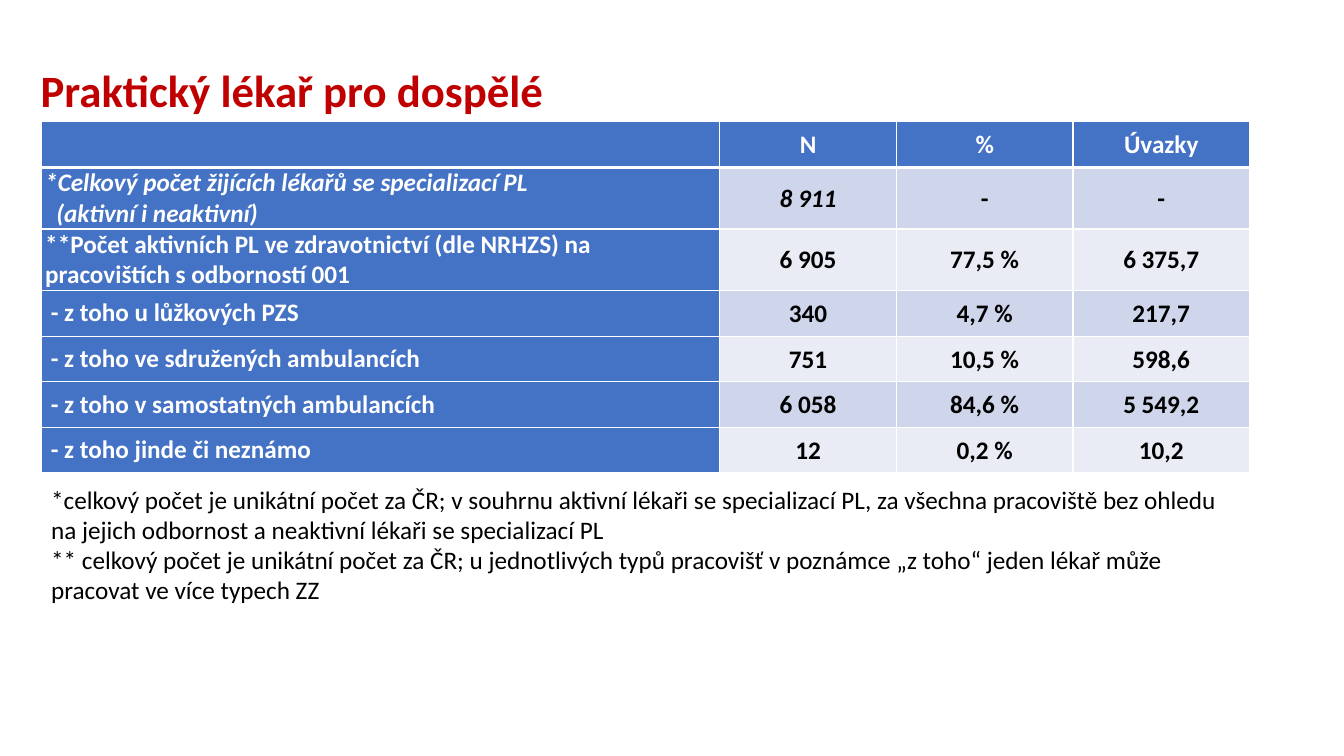
from lxml import etree
from pptx import Presentation
from pptx.dml.color import RGBColor
from pptx.enum.text import MSO_ANCHOR, MSO_AUTO_SIZE, PP_ALIGN
from pptx.oxml.ns import qn
from pptx.util import Cm, Pt

LEFT, CENTER = PP_ALIGN.LEFT, PP_ALIGN.CENTER
MIDDLE, BOTTOM = MSO_ANCHOR.MIDDLE, MSO_ANCHOR.BOTTOM
NO_FIT, GROW = MSO_AUTO_SIZE.NONE, MSO_AUTO_SIZE.SHAPE_TO_FIT_TEXT

WHITE = RGBColor(0xFF, 0xFF, 0xFF)
BLACK = RGBColor(0, 0, 0)
RED = RGBColor(0xC0, 0, 0)
BLUE = RGBColor(0x44, 0x72, 0xC4)
DARK = RGBColor(0xCF, 0xD5, 0xEA)
LIGHT = RGBColor(0xE9, 0xEB, 0xF5)


def write(frame, text, size=18, color=BLACK, bold=False, italic=False,
          align=LEFT, space=1.0, indents=()):
    """Fill a text frame, one paragraph per line; indents are in cm."""
    frame.text = text
    for par in frame.paragraphs:
        par.alignment = align
        par.line_spacing = space
        for run in par.runs:
            font = run.font
            font.name, font.size = "Calibri", Pt(size)
            font.bold, font.italic = bold, italic
            font.color.rgb = color
    for par, indent in zip(frame.paragraphs, indents):
        props = par._p.get_or_add_pPr()
        props.set("marL", str(Cm(indent)))
        props.set("indent", "0")


def edge(cell, side, width):
    """Add a white border; call before the cell gets its fill."""
    line = etree.SubElement(cell._tc.get_or_add_tcPr(), qn("a:ln" + side))
    line.set("w", str(Pt(width)))
    fill = etree.SubElement(line, qn("a:solidFill"))
    etree.SubElement(fill, qn("a:srgbClr")).set("val", str(WHITE))


deck = Presentation()
deck.slide_width, deck.slide_height = Cm(33.87), Cm(19.05)
slide = deck.slides.add_slide(deck.slide_layouts[5])

# Title
title = slide.shapes.title
title.left, title.top = Cm(0.77), Cm(1.42)
title.width, title.height = Cm(32.56), Cm(1.65)
write(title.text_frame, "Praktický lékař pro dospělé", size=32, color=RED,
      bold=True, space=1.1)
title.text_frame.vertical_anchor = BOTTOM
title.text_frame.auto_size = NO_FIT

# Table: label, its line indents, values
rows = [
    ("", (), "N", "%", "Úvazky"),
    ("*Celkový počet žijících lékařů se specializací PL\n(aktivní i neaktivní)",
     (0, 0.28), "8 911", "-", "-"),
    ("**Počet aktivních PL ve zdravotnictví (dle NRHZS) na\v"
     "pracovištích s odborností 001", (), "6 905", "77,5 %", "6 375,7"),
    ("- z toho u lůžkových PZS", (0.14,), "340", "4,7 %", "217,7"),
    ("- z toho ve sdružených ambulancích", (0.14,), "751", "10,5 %", "598,6"),
    ("- z toho v samostatných ambulancích", (0.14,),
     "6 058", "84,6 %", "5 549,2"),
    ("- z toho jinde či neznámo", (0.14,), "12", "0,2 %", "10,2"),
]
widths = [17.1, 4.45, 4.45, 4.45]
heights = [1.15, 1.55, 1.55, 1.15, 1.15, 1.15, 1.15]
table = slide.shapes.add_table(len(rows), len(widths), Cm(1.04), Cm(3.07),
                               Cm(sum(widths)), Cm(sum(heights))).table
for col, width in zip(table.columns, widths):
    col.width = Cm(width)

for r, (label, indents, *values) in enumerate(rows):
    table.rows[r].height = Cm(heights[r])
    for c, text in enumerate([label, *values]):
        cell = table.cell(r, c)
        head = r == 0 or c == 0
        for side in "LRTB":
            thick = (r, side) in [(0, "B"), (1, "T")]
            edge(cell, side, 3 if thick else 1)
        cell.fill.solid()
        cell.fill.fore_color.rgb = BLUE if head else DARK if r % 2 else LIGHT
        cell.vertical_anchor = MIDDLE
        cell.margin_left = cell.margin_right = Cm(0.1 if head else 0.03)
        cell.margin_top = Cm(0 if head else 0.03)
        cell.margin_bottom = 0
        write(cell.text_frame, text, color=WHITE if head else BLACK, bold=True,
              italic=r == 1 and c < 2, align=CENTER if c else LEFT,
              indents=() if c else indents)

# Notes
notes = slide.shapes.add_textbox(Cm(1.04), Cm(12.07), Cm(30.45), Cm(3.33))
notes.text_frame.word_wrap = True
notes.text_frame.auto_size = GROW
write(notes.text_frame,
      "*celkový počet je unikátní počet za ČR; v souhrnu aktivní lékaři se "
      "specializací PL, za všechna pracoviště bez ohledu na jejich odbornost "
      "a neaktivní lékaři se specializací PL\n"
      "** celkový počet je unikátní počet za ČR; u jednotlivých typů pracovišť "
      "v poznámce „z toho“ jeden lékař může pracovat ve více typech ZZ")

deck.save("out.pptx")
